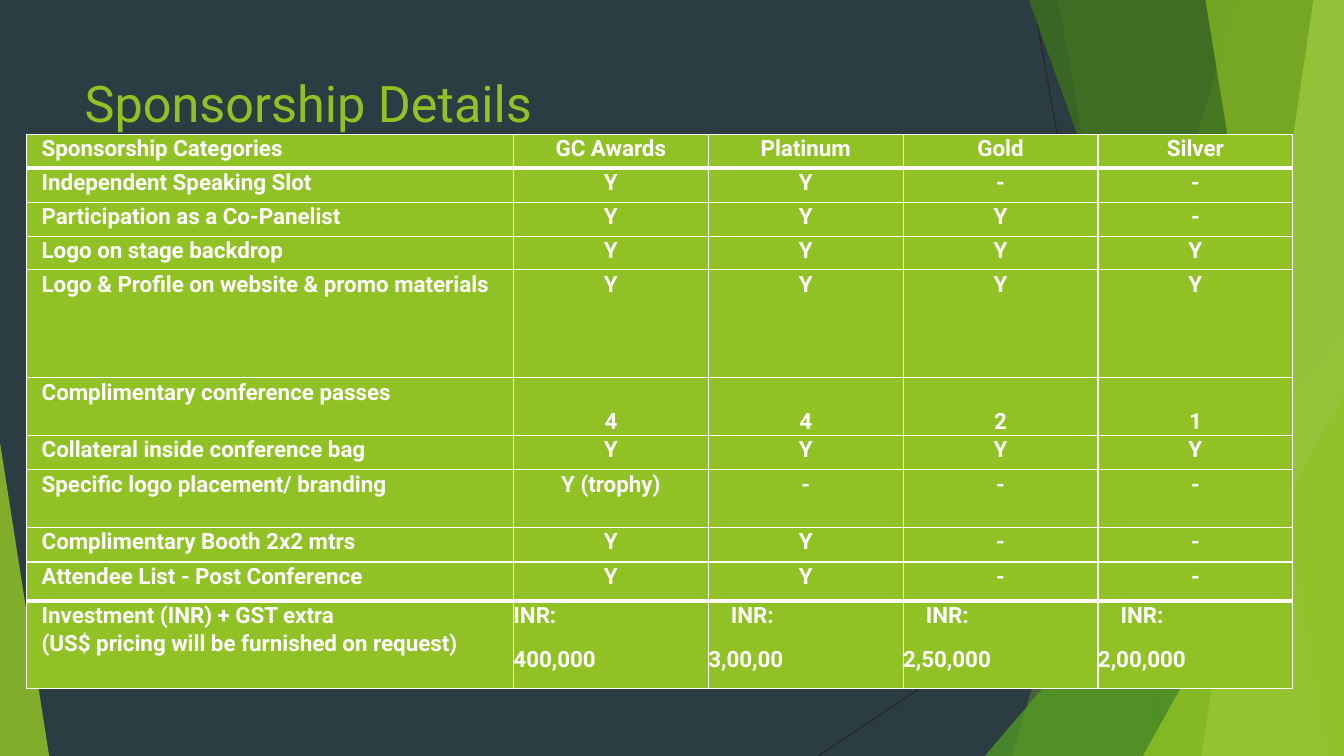
from dataclasses import dataclass
from itertools import zip_longest

from lxml import etree
from pptx import Presentation
from pptx import util as u
from pptx.dml.color import RGBColor
from pptx.enum import shapes, text
from pptx.oxml import ns

Cm = u.Cm
WIDTH, HEIGHT = 33.87, 19.05


@dataclass(frozen=True)
class Theme:
    font: str = "Roboto"
    title_size: float = 36
    table_size: float = 16
    background: str = "2C3C43"
    lime: str = "90C226"
    green: str = "54A021"
    forest: str = "3F7819"
    pale: str = "C0E474"
    white: str = "FFFFFF"
    ray: str = "262626"
    thin: float = 1
    thick: float = 3


THEME = Theme()
LEFT, CENTER = text.PP_ALIGN.LEFT, text.PP_ALIGN.CENTER

RAYS = [(26.04, 0, 29.41, HEIGHT), (WIDTH, 10.24, 20.62, HEIGHT)]
BACK_BANDS = [(31.19, 25.5, THEME.lime, 30), (26.67, 30.05, THEME.lime, 20)]
FRONT_BANDS = [
    (25.93, 32.79, THEME.forest, 70),
    (33.1, 30.28, THEME.pale, 70),
    (30.38, 33.48, THEME.lime, 65),
]

COLUMNS = [12.27] + [4.91] * 4
ROWS = [
    (0.86, "Sponsorship Categories", ["GC Awards", "Platinum", "Gold", "Silver"]),
    (0.86, "Independent Speaking Slot", ["Y", "Y", "-", "-"]),
    (0.86, "Participation as a Co-Panelist", ["Y", "Y", "Y", "-"]),
    (0.84, "Logo on stage backdrop", ["Y"] * 4),
    (2.72, "Logo & Profile on website & promo materials", ["Y"] * 4),
    (1.45, "Complimentary conference passes", ["4", "4", "2", "1"]),
    (0.87, "Collateral inside conference bag", ["Y"] * 4),
    (1.45, "Specific logo placement/ branding", ["Y (trophy)", "-", "-", "-"]),
    (0.87, "Complimentary Booth 2x2 mtrs", ["Y", "Y", "-", "-"]),
    (0.99, "Attendee List - Post Conference", ["Y", "Y", "-", "-"]),
    (2.2, "Investment (INR) + GST extra\n(US$ pricing will be furnished on request)",
     ["INR:\n400,000", "INR:\n3,00,00", "INR:\n2,50,000", "INR:\n2,00,000"]),
]
PASSES_ROW = 5
PRICE_ROW = len(ROWS) - 1
THICK_RULES = {1, PRICE_ROW}
LABEL_INDENT = 0.38
PRICE_INDENTS = [0, 0.57, 0.57, 0.57]


def write_text(frame, content, *, size, color, bold=False, align=LEFT,
               indents=(), spacing=None, before=None):
    lines = content.split("\n")
    for number, (line, indent) in enumerate(zip_longest(lines, indents[:len(lines)], fillvalue=0)):
        para = frame.paragraphs[0] if number == 0 else frame.add_paragraph()
        para.alignment = align
        para.line_spacing = spacing
        if before is not None:
            para.space_before = u.Pt(before)
        if indent:
            para._p.get_or_add_pPr().set("marL", str(Cm(indent)))
        span = para.add_run()
        span.text = line
        span.font.name = THEME.font
        span.font.size = u.Pt(size)
        span.font.bold = bold
        span.font.color.rgb = RGBColor.from_string(color)


def paint(shape, color, opacity):
    shape.shadow.inherit = False
    shape.line.fill.background()
    shape.fill.solid()
    shape.fill.fore_color.rgb = RGBColor.from_string(color)
    swatch = shape.fill._xPr.find(".//" + ns.qn("a:srgbClr"))
    etree.SubElement(swatch, ns.qn("a:alpha"), val=str(opacity * 1000))


def add_ray(page, x1, y1, x2, y2):
    ray = page.shapes.add_connector(
        shapes.MSO_CONNECTOR.STRAIGHT, Cm(x1), Cm(y1), Cm(x2), Cm(y2))
    ray.line.color.rgb = RGBColor.from_string(THEME.ray)
    ray.line.width = u.Pt(0.75)
    etree.SubElement(ray._element.spPr, ns.qn("a:effectLst"))


def add_band(page, top_x, bottom_x, color, opacity):
    outline = page.shapes.build_freeform(Cm(top_x), 0)
    outline.add_line_segments(
        [(Cm(WIDTH), 0), (Cm(WIDTH), Cm(HEIGHT)), (Cm(bottom_x), Cm(HEIGHT))])
    paint(outline.convert_to_shape(), color, opacity)


def add_corner(page, left, top, width, apex, color, opacity):
    corner = page.shapes.add_shape(
        shapes.MSO_SHAPE.ISOSCELES_TRIANGLE,
        Cm(left), Cm(top), Cm(width), Cm(HEIGHT - top))
    corner.adjustments[0] = apex
    paint(corner, color, opacity)


def add_backdrop(page):
    for ray in RAYS:
        add_ray(page, *ray)
    for band in BACK_BANDS:
        add_band(page, *band)
    add_corner(page, 24.82, 8.46, 9.05, 1, THEME.green, 72)
    for band in FRONT_BANDS:
        add_band(page, *band)
    add_corner(page, 28.8, 9.98, 5.07, 1, THEME.lime, 80)
    add_corner(page, 0, 11.15, 1.24, 0, THEME.lime, 85)


def add_title(page, content):
    title = page.shapes.title
    title.left, title.top, title.width, title.height = Cm(1.88), Cm(1.7), Cm(23.88), Cm(3.66)
    title.text_frame.vertical_anchor = text.MSO_ANCHOR.TOP
    write_text(title.text_frame, content, size=THEME.title_size, color=THEME.lime)
    tree = title.element.getparent()
    tree.append(title.element)


def set_borders(cell, top, bottom):
    properties = cell._tc.get_or_add_tcPr()
    for side, width in zip("LRTB", (THEME.thin, THEME.thin, top, bottom)):
        line = etree.SubElement(properties, ns.qn(f"a:ln{side}"), w=str(u.Pt(width)))
        fill = etree.SubElement(line, ns.qn("a:solidFill"))
        etree.SubElement(fill, ns.qn("a:srgbClr"), val=THEME.white)


def format_cell(cell, row):
    top, bottom = (THEME.thick if rule in THICK_RULES else THEME.thin for rule in (row, row + 1))
    set_borders(cell, top, bottom)
    cell.fill.solid()
    cell.fill.fore_color.rgb = RGBColor.from_string(THEME.lime)
    cell.margin_left = cell.margin_right = cell.margin_top = cell.margin_bottom = 0


def write_cell(cell, content, **layout):
    write_text(cell.text_frame, content, size=THEME.table_size, color=THEME.white,
               bold=True, spacing=1.07, **layout)


def add_sponsor_table(page):
    table = page.shapes.add_table(
        len(ROWS), len(COLUMNS), Cm(0.67), Cm(3.38),
        Cm(sum(COLUMNS)), Cm(sum(height for height, _, _ in ROWS))).table
    for column, width in zip(table.columns, COLUMNS):
        column.width = Cm(width)
    for row, (height, label, values) in enumerate(ROWS):
        table.rows[row].height = Cm(height)
        label_cell, *value_cells = table.rows[row].cells
        format_cell(label_cell, row)
        write_cell(label_cell, label, indents=[LABEL_INDENT] * 2, before=0.2)
        for cell, value, indent in zip(value_cells, values, PRICE_INDENTS):
            format_cell(cell, row)
            if row == PRICE_ROW:
                write_cell(cell, value, indents=[indent], before=11.2)
            else:
                write_cell(cell, value, align=CENTER, before=0)
            if row == PASSES_ROW:
                cell.vertical_anchor = text.MSO_ANCHOR.BOTTOM


def main():
    deck = Presentation()
    deck.slide_width, deck.slide_height = Cm(WIDTH), Cm(HEIGHT)
    page = deck.slides.add_slide(deck.slide_layouts.get_by_name("Title Only"))
    page.background.fill.solid()
    page.background.fill.fore_color.rgb = RGBColor.from_string(THEME.background)
    add_backdrop(page)
    add_title(page, "Sponsorship Details")
    add_sponsor_table(page)
    deck.save("out.pptx")


if __name__ == "__main__":
    main()
